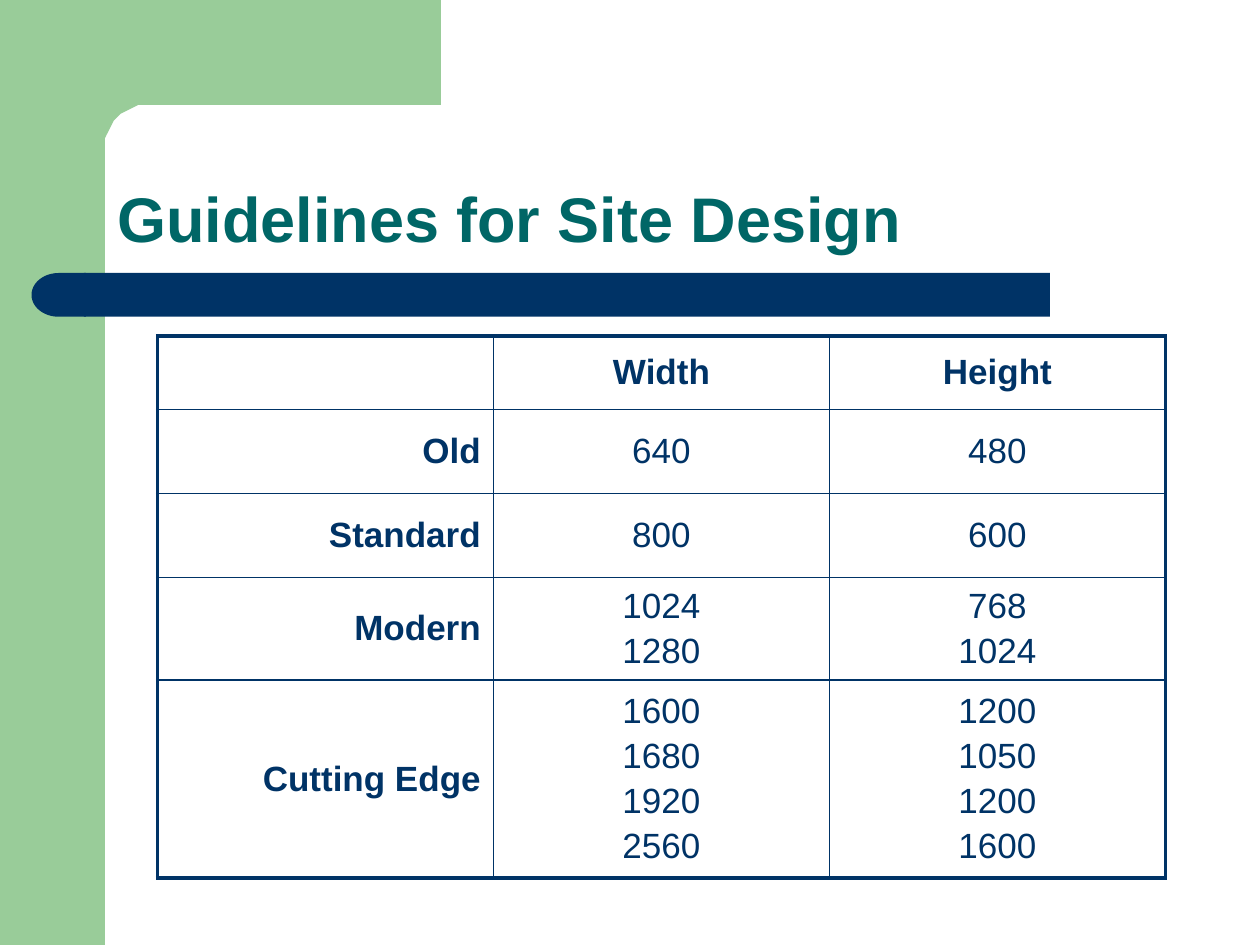
"""Build the slide on screen-size guidelines for site design."""
from dataclasses import dataclass
from math import cos, pi, sin

from lxml.etree import SubElement
from pptx import Presentation
from pptx.dml.color import RGBColor
from pptx.enum.shapes import MSO_SHAPE
from pptx.enum.text import MSO_ANCHOR, PP_ALIGN
from pptx.oxml.ns import qn
from pptx.util import Pt


@dataclass(frozen=True)
class Theme:
    font: str = "Arial"
    green: str = "99CC99"
    navy: str = "003366"
    teal: str = "006666"
    title_size: float = 36
    table_size: float = 20
    outer_line: float = 2.25
    inner_line: float = 1


@dataclass(frozen=True)
class Block:
    kind: MSO_SHAPE
    left: float
    top: float
    width: float
    height: float
    color: str
    rotation: float = 0


@dataclass(frozen=True)
class Row:
    label: str
    widths: str
    heights: str
    height: float


THEME = Theme()
SIDEBAR = Block(MSO_SHAPE.RECTANGLE, 0, 0, 60, 540, THEME.green)
RULE = (
    Block(MSO_SHAPE.RECTANGLE, 48, 156, 552, 25, THEME.navy),
    Block(MSO_SHAPE.FLOWCHART_DELAY, 18, 156, 31, 25, THEME.navy, 180),
)
ROWS = (
    Row("", "Width", "Height", 42),
    Row("Old", "640", "480", 48),
    Row("Standard", "800", "600", 48),
    Row("Modern", "1024\n1280", "768\n1024", 56),
    Row("Cutting Edge", "1600\n1680\n1920\n2560", "1200\n1050\n1200\n1600", 108.5),
)


def paint(sp, color: str) -> None:
    sp.fill.solid()
    sp.fill.fore_color.rgb = RGBColor.from_string(color)
    sp.line.fill.background()
    sp.shadow.inherit = False


def add_block(s, block: Block) -> None:
    sp = s.shapes.add_shape(block.kind, Pt(block.left), Pt(block.top),
                            Pt(block.width), Pt(block.height))
    sp.rotation = block.rotation
    paint(sp, block.color)


def add_corner(s, edge: float = 60, radius: float = 24, steps: int = 16) -> None:
    center = edge + radius
    angles = [pi / 2 * i / steps for i in range(steps + 1)]
    arc = [(center - radius * sin(a), center - radius * cos(a)) for a in angles]
    points = [(252, edge), *arc, (edge, 92), (36, 92), (36, 0)]
    builder = s.shapes.build_freeform(252, 0, scale=Pt(1))
    builder.add_line_segments(points, close=True)
    paint(builder.convert_to_shape(), THEME.green)


def style_runs(p, size: float, color: str, bold: bool) -> None:
    for r in p.runs:
        r.font.name = THEME.font
        r.font.size = Pt(size)
        r.font.bold = bold
        r.font.color.rgb = RGBColor.from_string(color)


def add_title(s, text: str) -> None:
    tf = s.shapes.add_textbox(Pt(60), Pt(60), Pt(624), Pt(90)).text_frame
    tf.word_wrap = True
    tf.vertical_anchor = MSO_ANCHOR.BOTTOM
    tf.text = text
    p = tf.paragraphs[0]
    p.line_spacing = 0.9
    style_runs(p, THEME.title_size, THEME.teal, True)


def set_border(cell, side: str, width: float) -> None:
    tc_pr = cell._tc.get_or_add_tcPr()
    ln = SubElement(tc_pr, qn(f"a:{side}"), w=str(Pt(width)))
    fill = SubElement(ln, qn("a:solidFill"))
    SubElement(fill, qn("a:srgbClr"), val=THEME.navy)


def fill_cell(cell, text: str, align: PP_ALIGN, bold: bool) -> None:
    cell.vertical_anchor = MSO_ANCHOR.MIDDLE
    cell.text_frame.text = text
    for i, p in enumerate(cell.text_frame.paragraphs):
        p.alignment = align
        p.space_before = Pt(3.3 if i else 0)
        style_runs(p, THEME.table_size, THEME.navy, bold)


def add_size_table(s, rows: tuple[Row, ...]) -> None:
    total = sum(row.height for row in rows)
    table = s.shapes.add_table(len(rows), 3, Pt(90), Pt(192), Pt(576), Pt(total)).table
    table.horz_banding = False
    last_row, last_col = len(rows) - 1, 2
    for i, row in enumerate(rows):
        table.rows[i].height = Pt(row.height)
        for j, text in enumerate((row.label, row.widths, row.heights)):
            cell = table.cell(i, j)
            align = PP_ALIGN.CENTER if j else PP_ALIGN.RIGHT
            fill_cell(cell, text, align, i == 0 or j == 0)
            edges = {"lnL": j == 0, "lnR": j == last_col,
                     "lnT": i == 0, "lnB": i == last_row}
            for side, outer in edges.items():
                set_border(cell, side, THEME.outer_line if outer else THEME.inner_line)
            cell.fill.background()


def main() -> None:
    prs = Presentation()
    prs.slide_width, prs.slide_height = Pt(720), Pt(540)
    s = prs.slides.add_slide(prs.slide_layouts[6])
    add_block(s, SIDEBAR)
    add_corner(s)
    for block in RULE:
        add_block(s, block)
    add_title(s, "Guidelines for Site Design")
    add_size_table(s, ROWS)
    prs.save("out.pptx")


if __name__ == "__main__":
    main()
